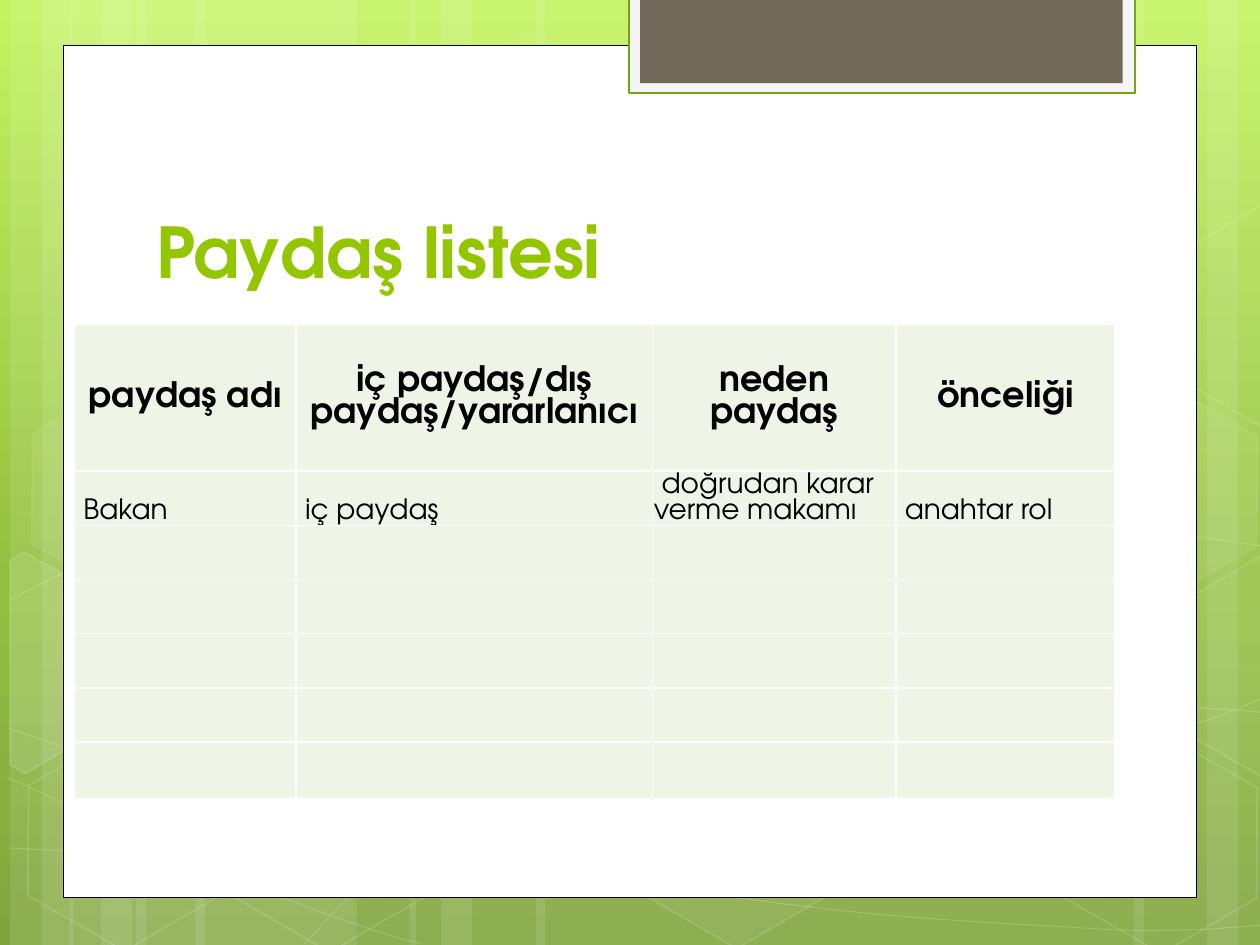
"""Build the stakeholder list slide with its green backdrop and table."""
import copy
import dataclasses
import typing

import lxml.etree
import pptx
import pptx.dml.color
import pptx.enum.shapes
import pptx.enum.text
import pptx.oxml.ns
import pptx.util

Inches = pptx.util.Inches
Point = tuple[float, float]
SHAPES = pptx.enum.shapes.MSO_SHAPE
ANCHOR = pptx.enum.text.MSO_ANCHOR
ALIGN = pptx.enum.text.PP_ALIGN


@dataclasses.dataclass(frozen=True)
class Theme:
    """Colours, font and type sizes of the slide."""
    font: str = "TeX Gyre Adventor"
    title_size: int = 40
    header_size: int = 20
    body_size: int = 16
    body_spacing: int = 15
    accent: str = "94C600"
    white: str = "FFFFFF"
    black: str = "000000"
    cell: str = "EEF5E7"
    tab_frame: str = "F5F5F5"
    tab_line: str = "74A510"
    tab: str = "71685A"
    gradient: tuple = ((0, "C3F35F"), (0.62, "93BF3F"), (1, "81A53E"))


class Stripe(typing.NamedTuple):
    """A translucent full-height band."""
    left: float
    width: float


class Hexagon(typing.NamedTuple):
    """A tilted hexagon with opacities in percent."""
    left: float
    top: float
    fill_opacity: int
    line_opacity: int


class Outline(typing.NamedTuple):
    """A hexagon cut off by the slide edge."""
    points: list[Point]
    fill_opacity: int


class Panel(typing.NamedTuple):
    """An opaque rectangle."""
    left: float
    top: float
    width: float
    height: float
    fill: str
    line: str | None
    line_width: float


THEME = Theme()
STRIPES = [Stripe(*values) for values in (
    (1.08, 1.75), (0.08, 0.5), (0.33, 0.83), (1.55, 1.75), (0.55, 0.5), (0.8, 0.83),
    (7.33, 1.75), (9.58, 0.5), (9, 0.83), (4.25, 3.08), (3.25, 0.5), (3.5, 0.83))]
CURVES = [
    [(0.07, 6.73), (0.61, 6.76), (1.15, 6.79), (1.9, 6.78), (2.65, 6.77), (3.58, 6.75),
     (4.58, 6.65), (5.58, 6.55), (7, 6.36), (7.92, 6.17), (8.83, 5.98), (9.77, 5.68), (10.07, 5.51)],
    [(0.07, 4.77), (0.36, 4.61), (0.65, 4.46), (1.21, 4.31), (1.78, 4.16), (2.59, 3.94),
     (3.47, 3.87), (4.36, 3.8), (5.44, 3.79), (6.54, 3.87), (7.64, 3.95), (9.47, 4.26), (10.07, 4.34)],
    [(0.06, 6.17), (1.27, 6.72), (2.47, 7.27), (3.34, 7.49)],
    [(0.07, 5.78), (0.38, 5.89), (0.7, 6), (1.28, 6.16), (1.86, 6.31), (2.73, 6.56),
     (3.57, 6.73), (4.4, 6.9), (5.45, 7.08), (6.28, 7.18), (7.11, 7.29), (8, 7.33),
     (8.53, 7.36), (9.05, 7.4), (9.19, 7.38), (9.45, 7.38), (9.71, 7.37), (9.89, 7.35), (10.07, 7.34)],
    [(2.42, 7.49), (2.6, 7.29), (2.78, 7.09), (3.02, 6.91), (3.26, 6.73), (3.6, 6.53),
     (3.88, 6.39), (4.16, 6.25), (4.33, 6.19), (4.7, 6.09), (5.06, 5.99), (5.73, 5.85),
     (6.08, 5.78), (6.44, 5.71), (6.49, 5.71), (6.8, 5.69), (7.11, 5.66), (7.6, 5.63),
     (7.94, 5.62), (8.29, 5.61), (8.86, 5.62), (8.86, 5.62), (9.08, 5.62), (9.31, 5.62),
     (9.53, 5.62), (9.71, 5.63), (9.88, 5.64), (9.97, 5.65), (10.06, 5.66), (10.03, 5.65), (10.06, 5.66)],
]
HEXAGONS = [Hexagon(*values) for values in (
    (3.34, 0.36, 4, 8), (4.97, 5.89, 6, 12), (0.11, 5.91, 0, 12), (0.14, 3.12, 7, 8),
    (1.74, 5.92, 0, 12), (7.53, 4.53, 10, 12), (8.34, 5.93, 0, 12), (8.34, 3.14, 7, 8))]
OUTLINES = [
    Outline([(0.08, 4.45), (0.19, 4.38), (0.96, 4.82), (0.95, 5.7), (0.2, 6.14), (0.08, 6.07)], 10),
    Outline([(9.26, 4.85), (10.01, 4.41), (10.09, 4.46), (10.09, 6.13), (10.02, 6.17), (9.26, 5.73)], 4),
    Outline([(9.26, 2.07), (10.01, 1.63), (10.1, 1.68), (10.09, 3.35), (10.02, 3.39), (9.26, 2.95)], 0),
]
PANELS = [
    Panel(0.5, 0.36, 9, 6.76, THEME.white, THEME.black, 0.5),
    Panel(4.99, -0.02, 4.02, 0.76, THEME.tab_frame, THEME.tab_line, 1.25),
    Panel(5.08, -0.02, 3.83, 0.68, THEME.tab, None, 0),
]
COLUMN_WIDTHS = [1.76, 2.83, 1.93, 1.74]
ROW_HEIGHTS = [1.17] + [0.43] * 5 + [0.45]
HEADERS = ["paydaş adı", "iç paydaş/dış paydaş/yararlanıcı", "neden paydaş", "önceliği"]
FIRST_ROW = [" Bakan", " iç paydaş", " doğrudan karar verme makamı", " anahtar rol"]


def paint(fill, colour: str, opacity: int = 100) -> None:
    """Give a fill a solid colour, or clear it at zero opacity."""
    if not opacity:
        fill.background()
        return
    fill.solid()
    fill.fore_color.rgb = pptx.dml.color.RGBColor.from_string(colour)
    if opacity < 100:
        colour_element = fill._xPr.find(".//" + pptx.oxml.ns.qn("a:srgbClr"))
        alpha = lxml.etree.SubElement(colour_element, pptx.oxml.ns.qn("a:alpha"))
        alpha.set("val", str(opacity * 1000))


def style(shape, fill: str = THEME.white, fill_opacity: int = 100, line: str = THEME.white,
          line_opacity: int = 100, line_width: float = 1) -> None:
    """Set fill and line of a shape and drop its shadow."""
    shape.shadow.inherit = False
    paint(shape.fill, fill, fill_opacity)
    shape.line.width = pptx.util.Pt(line_width)
    paint(shape.line.fill, line, line_opacity)


def add_preset(slide, kind, left: float, top: float, width: float, height: float):
    """Add a preset shape measured in inches."""
    return slide.shapes.add_shape(kind, Inches(left), Inches(top), Inches(width), Inches(height))


def add_path(slide, points: list[Point], close: bool):
    """Add a freeform through points measured in inches."""
    lengths = [(Inches(x), Inches(y)) for x, y in points]
    builder = slide.shapes.build_freeform(*lengths[0])
    builder.add_line_segments(lengths[1:], close=close)
    return builder.convert_to_shape()


def add_curve(slide, controls: list[Point]):
    """Add a chain of cubic Bezier segments."""
    shape = add_path(slide, controls, False)
    segments = shape._element.findall(".//" + pptx.oxml.ns.qn("a:lnTo"))
    for start in range(0, len(segments), 3):
        first, *others = segments[start:start + 3]
        first.tag = pptx.oxml.ns.qn("a:cubicBezTo")
        for other in others:
            first.append(other[0])
            other.getparent().remove(other)
    return shape


def write_text(frame, text: str, *, size: int, colour: str = THEME.black, bold: bool = False,
               align=ALIGN.LEFT, spacing: int | None = None) -> None:
    """Write one formatted paragraph into a text frame."""
    frame.word_wrap = True
    paragraph = frame.paragraphs[0]
    paragraph.alignment = align
    if spacing:
        paragraph.line_spacing = pptx.util.Pt(spacing)
    run = paragraph.add_run()
    run.text = text
    run.font.name = THEME.font
    run.font.size = pptx.util.Pt(size)
    run.font.bold = bold
    run.font.color.rgb = pptx.dml.color.RGBColor.from_string(colour)


def draw_backdrop(slide) -> None:
    """Draw the gradient, bands, curves, hexagons and panels."""
    fill = slide.background.fill
    fill.gradient()
    fill.gradient_angle = 270
    stop_list = slide.element.find(".//" + pptx.oxml.ns.qn("a:gsLst"))
    stop_list.append(copy.deepcopy(stop_list[-1]))
    for stop, (position, colour) in zip(fill.gradient_stops, THEME.gradient):
        stop.position = position
        stop.color.rgb = pptx.dml.color.RGBColor.from_string(colour)
    for stripe in STRIPES:
        shape = add_preset(slide, SHAPES.RECTANGLE, stripe.left, 0, stripe.width, 7.5)
        style(shape, fill_opacity=10, line_opacity=0)
    for controls in CURVES:
        style(add_curve(slide, controls), fill_opacity=0, line_opacity=20, line_width=0.5)
    for hexagon in HEXAGONS:
        shape = add_preset(slide, SHAPES.HEXAGON, hexagon.left, hexagon.top, 1.75, 1.52)
        shape.rotation = 30
        shape.adjustments[0] = 0.285
        style(shape, fill_opacity=hexagon.fill_opacity, line_opacity=hexagon.line_opacity)
    for outline in OUTLINES:
        style(add_path(slide, outline.points, True), fill_opacity=outline.fill_opacity, line_opacity=12)
    for panel in PANELS:
        shape = add_preset(slide, SHAPES.RECTANGLE, *panel[:4])
        style(shape, panel.fill, line=panel.line or THEME.white,
              line_opacity=100 if panel.line else 0, line_width=panel.line_width)


def format_cell(cell, anchor) -> None:
    """Set borders, fill, margins and anchor of a table cell."""
    properties = cell._tc.get_or_add_tcPr()
    for side in ("lnL", "lnR", "lnT", "lnB"):
        border = lxml.etree.SubElement(properties, pptx.oxml.ns.qn(f"a:{side}"), w="12700")
        solid = lxml.etree.SubElement(border, pptx.oxml.ns.qn("a:solidFill"))
        lxml.etree.SubElement(solid, pptx.oxml.ns.qn("a:srgbClr"), val=THEME.white)
    paint(cell.fill, THEME.cell)
    cell.margin_left = cell.margin_right = cell.margin_top = Inches(0.01)
    cell.margin_bottom = 0
    cell.vertical_anchor = anchor


def draw_table(slide) -> None:
    """Draw the stakeholder table."""
    table = slide.shapes.add_table(len(ROW_HEIGHTS), len(COLUMN_WIDTHS), Inches(0.59), Inches(2.57),
                                   Inches(sum(COLUMN_WIDTHS)), Inches(sum(ROW_HEIGHTS))).table
    table.first_row = table.horz_banding = False
    for column, width in zip(table.columns, COLUMN_WIDTHS):
        column.width = Inches(width)
    for index, (row, height) in enumerate(zip(table.rows, ROW_HEIGHTS)):
        row.height = Inches(height)
        for cell in row.cells:
            format_cell(cell, ANCHOR.BOTTOM if index else ANCHOR.MIDDLE)
    for column, (header, text) in enumerate(zip(HEADERS, FIRST_ROW)):
        write_text(table.cell(0, column).text_frame, header, size=THEME.header_size, bold=True, align=ALIGN.CENTER)
        write_text(table.cell(1, column).text_frame, text, size=THEME.body_size, spacing=THEME.body_spacing)


def main() -> None:
    """Build and save the presentation."""
    presentation = pptx.Presentation()
    presentation.slide_width, presentation.slide_height = Inches(10), Inches(7.5)
    slide = presentation.slides.add_slide(presentation.slide_layouts[6])
    draw_backdrop(slide)
    title = slide.shapes.add_textbox(Inches(1.14), Inches(1.12), Inches(7.68), Inches(1.25))
    title.text_frame.vertical_anchor = ANCHOR.BOTTOM
    write_text(title.text_frame, "Paydaş listesi", size=THEME.title_size, colour=THEME.accent, bold=True)
    draw_table(slide)
    presentation.save("out.pptx")


if __name__ == "__main__":
    main()
